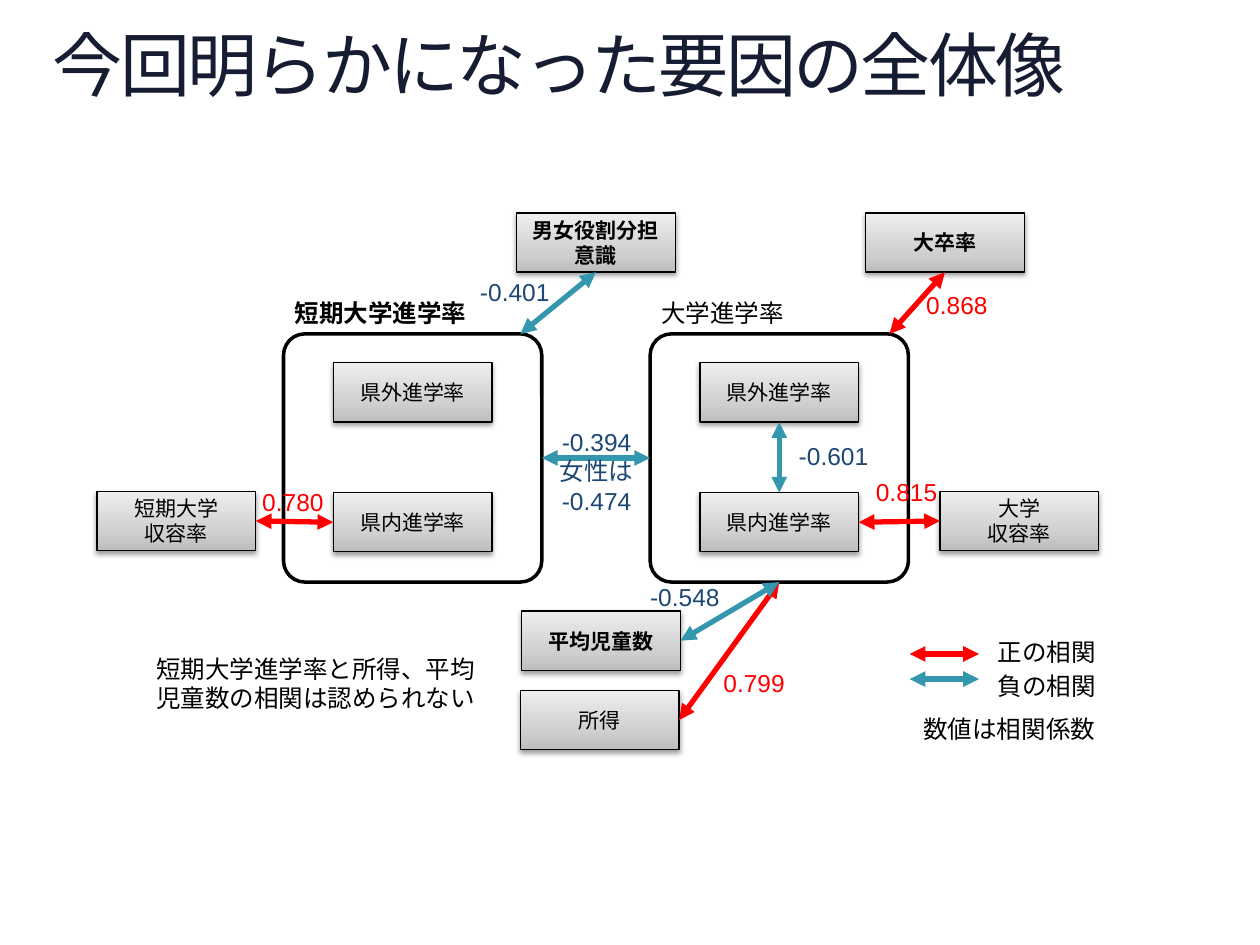
from lxml.etree import SubElement
from pptx import Presentation
from pptx.dml.color import RGBColor
from pptx.enum.lang import MSO_LANGUAGE_ID as Language
from pptx.enum.shapes import MSO_CONNECTOR as Connector, MSO_SHAPE as Shape
from pptx.enum.text import MSO_ANCHOR as Anchor, MSO_AUTO_SIZE as AutoSize, PP_ALIGN as Align
from pptx.oxml.ns import qn
from pptx.util import Inches, Pt

# Grid of 100 columns by 75 rows
COLUMNS, ROWS, CELL = 100, 75, Inches(0.1)
NODE_WIDTH, NODE_HEIGHT = 12.6, 4.7
PANEL_WIDTH, PANEL_HEIGHT, PANEL_TOP = 20.5, 19.7, 26.5
LABEL_WIDTH, LINE_HEIGHT = 7.9, 3.4
TOP, LEFT, BOTTOM, RIGHT = range(4)  # connection sites of a rectangle

COLORS = {
    "text": "000000", "outline": "000000", "shadow": "000000",
    "positive": "FF0000", "negative": "3497AE", "negative_text": "1D4775",
}
NODE_STOPS = [(0, "BDBDBD"), (35, "D1D1D1"), (100, "EEEEEE")]
TITLE_STOPS = [(0, "2E59B0"), (49, "161D32"), (100, "000000")]


def grid(*lengths):
    return [round(length * CELL) for length in lengths]


def color(name):
    return RGBColor.from_string(COLORS[name])


def add_gradient(fill, element, stops, angle):
    fill.gradient()
    fill.gradient_angle = angle
    stop_list = element.find(".//" + qn("a:gsLst"))
    for stop in list(stop_list):
        stop_list.remove(stop)
    for position, value in stops:
        stop = SubElement(stop_list, qn("a:gs"), pos=str(position * 1000))
        SubElement(stop, qn("a:srgbClr"), val=value)


def add_shadow(shape):
    shape.shadow.inherit = False
    effects = shape._element.spPr.find(qn("a:effectLst"))
    shadow = SubElement(effects, qn("a:outerShdw"), blurRad=str(Pt(3.1)),
                        dist=str(Pt(1.6)), dir="5400000", rotWithShape="0")
    tint = SubElement(shadow, qn("a:srgbClr"), val=COLORS["shadow"])
    SubElement(tint, qn("a:alpha"), val="38000")


def write(frame, text, ink="text", align=Align.LEFT, **font):
    frame.text = text
    values = {"language_id": Language.JAPANESE, **font}
    for paragraph in frame.paragraphs:
        paragraph.alignment = align
        for run in paragraph.runs:
            run.font.color.rgb = color(ink)
            for name, value in values.items():
                setattr(run.font, name, value)


def add_text(slide, box, text, wrap=True, **style):
    frame = slide.shapes.add_textbox(*grid(*box)).text_frame
    frame.word_wrap = wrap
    frame.auto_size = AutoSize.SHAPE_TO_FIT_TEXT
    write(frame, text, **{"name": "Calibri", "size": Pt(14), **style})


def add_value(slide, left, top, text, ink, height=LINE_HEIGHT):
    add_text(slide, (left, top, LABEL_WIDTH, height), text,
             ink=ink, align=Align.CENTER, name="Arial")


def add_node(slide, left, top, text, bold=None):
    node = slide.shapes.add_shape(
        Shape.RECTANGLE, *grid(left, top, NODE_WIDTH, NODE_HEIGHT))
    add_gradient(node.fill, node._element.spPr, NODE_STOPS, 90)
    node.line.color.rgb, node.line.width = color("outline"), Pt(0.75)
    add_shadow(node)
    node.text_frame.vertical_anchor = Anchor.MIDDLE
    write(node.text_frame, text, align=Align.CENTER, name="Karla", size=Pt(12), bold=bold)
    return node


def add_arrow(slide, begin, end, sign):
    """Each end is a grid point or a (shape, connection site) pair."""
    points = [(0, 0) if hasattr(point[0], "shape_id") else grid(*point)
              for point in (begin, end)]
    arrow = slide.shapes.add_connector(Connector.STRAIGHT, *points[0], *points[1])
    for point, connect in ((begin, arrow.begin_connect), (end, arrow.end_connect)):
        if hasattr(point[0], "shape_id"):
            connect(*point)
    arrow.line.color.rgb, arrow.line.width = color(sign), Pt(3)
    properties = arrow._element.spPr
    for tip in ("a:headEnd", "a:tailEnd"):
        SubElement(properties.find(qn("a:ln")), qn(tip), type="triangle")
    SubElement(properties, qn("a:effectLst"))


def add_title(slide, box, text):
    title = slide.shapes.title
    title.left, title.top, title.width, title.height = grid(*box)
    frame = title.text_frame
    write(frame, text, name="Calibri", size=Pt(40))
    settings = {"margin_left": 0, "margin_right": 0, "margin_top": 0, "margin_bottom": 0,
                "vertical_anchor": Anchor.TOP, "word_wrap": True,
                "auto_size": AutoSize.SHAPE_TO_FIT_TEXT}
    for name, value in settings.items():
        setattr(frame, name, value)
    frame.paragraphs[0].line_spacing = 0.9
    run = frame.paragraphs[0].runs[0]
    add_gradient(run.font.fill, run._r, TITLE_STOPS, 270)
    run._r.get_or_add_rPr().set("spc", "-150")


def add_panel(slide, left, top, heading, heading_width, bold=None):
    """Rounded frame with its heading and the two rates inside."""
    panel = slide.shapes.add_shape(
        Shape.ROUNDED_RECTANGLE, *grid(left, top, PANEL_WIDTH, PANEL_HEIGHT))
    panel.adjustments[0] = 0.086
    panel.fill.background()
    panel.line.color.rgb, panel.line.width = color("outline"), Pt(2)
    panel.shadow.inherit = False
    add_text(slide, (left - 0.1, top - 3.3, heading_width, LINE_HEIGHT), heading, bold=bold)
    node_left = left + (PANEL_WIDTH - NODE_WIDTH) / 2
    outside = add_node(slide, node_left, top + 2.3, "県外進学率")
    inside = add_node(slide, node_left, top + 12.6, "県内進学率")
    return panel, outside, inside


def add_legend(slide, left, top):
    for row, (sign, text) in enumerate((("positive", "正の相関"), ("negative", "負の相関"))):
        y = top + 1.8 + 2 * row
        add_arrow(slide, (left + 5.4, y), (left - 0.1, y), sign)
        add_text(slide, (left + 5.9, top + 2.7 * row, 9.9, LINE_HEIGHT), text)
    add_text(slide, (left, top + 6.1, 15.8, LINE_HEIGHT), "数値は相関係数", wrap=False)


def add_diagram(slide):
    # The two enrolment panels
    college, _, college_inside = add_panel(
        slide, 22.5, PANEL_TOP, "短期大学進学率", 16.1, bold=True)
    university, outside, inside = add_panel(slide, 51.6, PANEL_TOP, "大学進学率", 13.2)

    # Factors around them
    college_capacity = add_node(slide, 7.7, 39, "短期大学\v収容率")
    capacity = add_node(slide, 74.6, 39, "大学\n収容率")
    roles = add_node(slide, 41, 16.9, "男女役割分担意識", bold=True)
    graduates = add_node(slide, 68.7, 16.9, "大卒率", bold=True)
    income = add_node(slide, 41.3, 54.8, "所得")
    children = add_node(slide, 41.4, 48.5, "平均児童数", bold=True)

    # Correlations
    for begin, end, sign in (
        ((capacity, LEFT), (inside, RIGHT), "positive"),
        ((university, BOTTOM), (income, RIGHT), "positive"),
        ((college_inside, LEFT), (college_capacity, RIGHT), "positive"),
        ((graduates, BOTTOM), (70.6, PANEL_TOP), "positive"),
        ((outside, BOTTOM), (inside, TOP), "negative"),
        ((college, RIGHT), (university, LEFT), "negative"),
        ((children, RIGHT), (university, BOTTOM), "negative"),
        ((roles, BOTTOM), (41.3, PANEL_TOP), "negative"),
    ):
        add_arrow(slide, begin, end, sign)

    # Coefficients
    for left, top, text, ink in (
        (62.2, 34.5, "-0.601", "negative_text"),
        (50.4, 45.7, "-0.548", "negative_text"),
        (36.9, 21.5, "-0.401", "negative_text"),
        (68, 37.4, "0.815", "positive"),
        (19.3, 38.2, "0.780", "positive"),
        (55.9, 52.5, "0.799", "positive"),
        (72, 22.5, "0.868", "positive"),
    ):
        add_value(slide, left, top, text, ink)
    add_value(slide, 43.4, 33.4, "-0.394\n女性は\n-0.474", "negative_text", height=8.1)


def main():
    presentation = Presentation()
    presentation.slide_width, presentation.slide_height = grid(COLUMNS, ROWS)
    slide = presentation.slides.add_slide(presentation.slide_layouts[5])
    add_title(slide, (4.2, 2.5, 91.7, 6.1), "今回明らかになった要因の全体像")
    add_diagram(slide)
    add_text(slide, (11.4, 51.4, 27.7, 5.7),
             "短期大学進学率と所得、平均児童数の相関は認められない")
    add_legend(slide, 72.3, 50.1)
    presentation.save("out.pptx")


if __name__ == "__main__":
    main()
